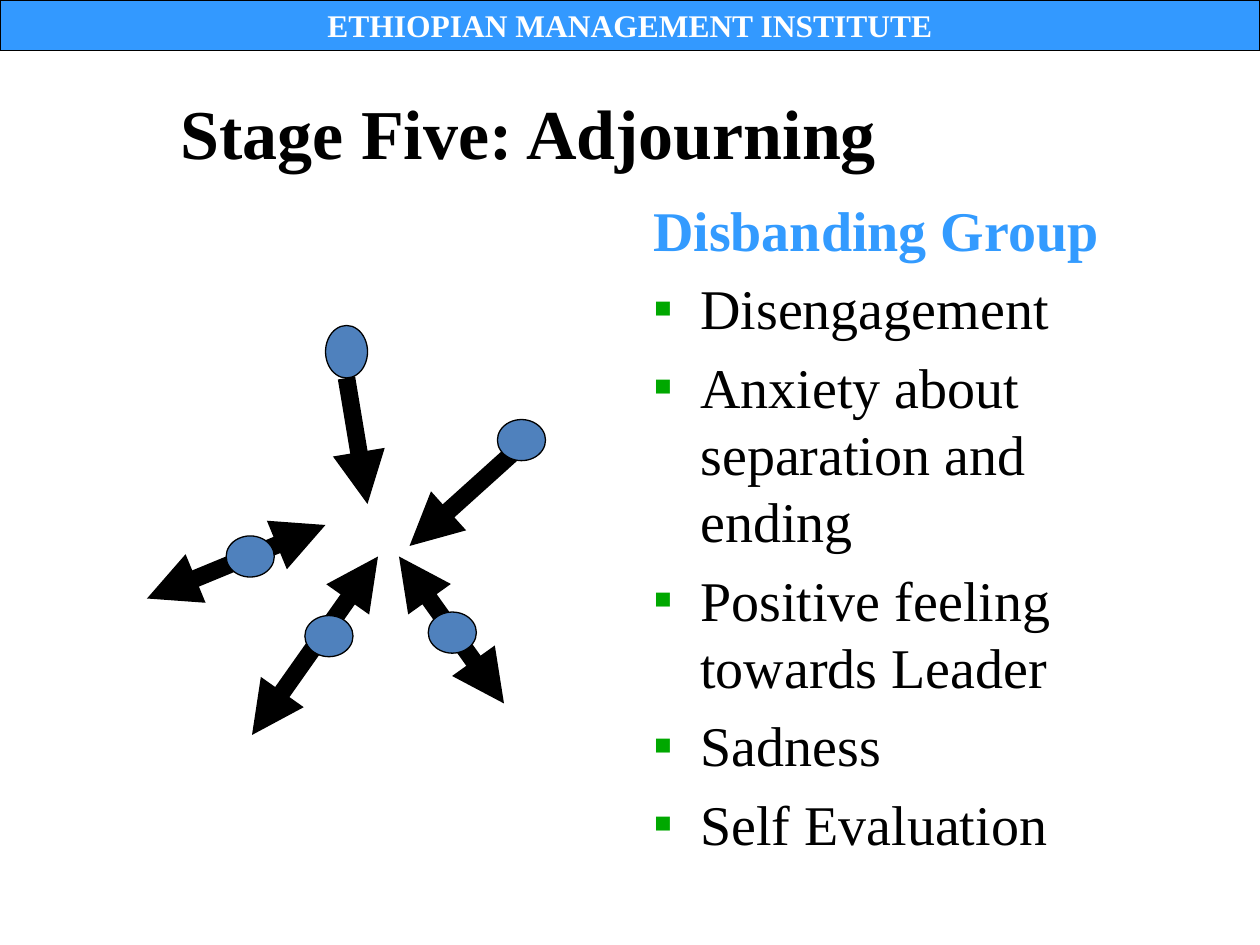
from dataclasses import dataclass

from lxml import etree
from pptx import Presentation
from pptx.dml.color import RGBColor
from pptx.enum.shapes import MSO_CONNECTOR, MSO_SHAPE
from pptx.enum.text import MSO_ANCHOR, MSO_AUTO_SIZE, PP_ALIGN
from pptx.oxml.ns import qn
from pptx.util import Pt

STRAIGHT = MSO_CONNECTOR.STRAIGHT
RECTANGLE, OVAL = MSO_SHAPE.RECTANGLE, MSO_SHAPE.OVAL
TOP, MIDDLE = MSO_ANCHOR.TOP, MSO_ANCHOR.MIDDLE
LEFT, CENTER = PP_ALIGN.LEFT, PP_ALIGN.CENTER
NO_AUTOFIT = MSO_AUTO_SIZE.NONE


@dataclass(frozen=True)
class Theme:
    """Colours, typeface and sizes of the slide."""
    ink: str = "000000"
    paper: str = "FFFFFF"
    banner: str = "3399FF"
    heading: str = "339BFF"
    bullet: str = "00A800"
    member: str = "4F81BD"
    face: str = "Times New Roman"
    banner_size: float = 18
    title_size: float = 40
    list_size: float = 32
    outline: float = 0.75
    arrow: float = 10


THEME = Theme()
SLIDE_SIZE = (720, 540)
BANNER_BOX = (0, 0, 720, 28.8)
TITLE_BOX = (96, 42, 624, 66)
LIST_BOX = (366, 108, 318, 348)
DIAGRAM_ORIGIN = (84, 186)

HEADING = "Disbanding Group"
SIGNS = [
    "Disengagement",
    "Anxiety about separation and ending",
    "Positive feeling towards Leader",
    "Sadness",
    "Self Evaluation",
]

ONE_WAY, TWO_WAY = ("tailEnd",), ("headEnd", "tailEnd")
ARROWS = [
    ((114, 30), (126, 102), ONE_WAY),
    ((210, 72), (150, 126), ONE_WAY),
    ((102, 114), (0, 156), TWO_WAY),
    ((132, 132), (60, 234), TWO_WAY),
    ((144, 132), (204, 216), TWO_WAY),
]
TALL, WIDE = (24, 30), (27.5, 23.5)
MEMBERS = [
    ((114, 15), TALL),
    ((214, 65.5), WIDE),
    ((59, 132), WIDE),
    ((104, 177.5), WIDE),
    ((174.5, 175.5), WIDE),
]


def apply(target, values):
    """Set every named attribute on the target."""
    for name, value in values.items():
        setattr(target, name, value)


def place(shape, box):
    """Move a shape to a box given in points."""
    sides = ("left", "top", "width", "height")
    apply(shape, dict(zip(sides, map(Pt, box))))


def write(paragraph, text, size, color, bold=False):
    """Add one formatted run to a paragraph."""
    run = paragraph.add_run()
    run.text = text
    apply(run.font, {"name": THEME.face, "size": Pt(size), "bold": bold})
    run.font.color.rgb = RGBColor.from_string(color)


def paint(shape, fill):
    """Give a shape a flat fill and a thin outline."""
    shape.fill.solid()
    shape.fill.fore_color.rgb = RGBColor.from_string(fill)
    shape.line.color.rgb = RGBColor.from_string(THEME.ink)
    shape.line.width = Pt(THEME.outline)
    shape.shadow.inherit = False


def hang(paragraph, bullet=None):
    """Set a hanging indent, with a coloured bullet if one is given."""
    properties = paragraph._p.get_or_add_pPr()
    properties.set("marL", str(Pt(27)))
    properties.set("indent", str(-Pt(27)))
    if bullet is None:
        etree.SubElement(properties, qn("a:buNone"))
        return
    tint = etree.SubElement(properties, qn("a:buClr"))
    etree.SubElement(tint, qn("a:srgbClr"), val=THEME.bullet)
    etree.SubElement(properties, qn("a:buFont"), typeface=THEME.face)
    etree.SubElement(properties, qn("a:buChar"), char=bullet)


def add_banner(slide, box):
    """Draw the institute banner across the top."""
    banner = slide.shapes.add_shape(RECTANGLE, *map(Pt, box))
    paint(banner, THEME.banner)
    apply(banner.text_frame, {"word_wrap": True, "vertical_anchor": MIDDLE})
    name = banner.text_frame.paragraphs[0]
    name.alignment = CENTER
    write(name, "ETHIOPIAN MANAGEMENT INSTITUTE", THEME.banner_size, THEME.paper, True)


def add_title(slide, box):
    """Fill the title placeholder."""
    title = slide.shapes.title
    place(title, box)
    apply(title.text_frame, {"auto_size": NO_AUTOFIT, "vertical_anchor": MIDDLE})
    stage = title.text_frame.paragraphs[0]
    stage.alignment = LEFT
    write(stage, "Stage Five: Adjourning", THEME.title_size, THEME.ink, True)


def add_signs(slide, box):
    """Fill the body placeholder with the heading and its list."""
    body = slide.placeholders[1]
    place(body, box)
    frame = body.text_frame
    apply(frame, {"auto_size": NO_AUTOFIT, "vertical_anchor": TOP})
    heading = frame.paragraphs[0]
    heading.space_before = Pt(0)
    hang(heading)
    write(heading, HEADING, THEME.list_size, THEME.heading, True)
    for sign in SIGNS:
        item = frame.add_paragraph()
        item.space_before = Pt(6.4)
        hang(item, "▪")
        write(item, sign, THEME.list_size, THEME.ink)


def add_diagram(slide, origin):
    """Draw the members drifting away from the group."""
    left, top = origin
    group = slide.shapes.add_group_shape()
    for (x1, y1), (x2, y2), ends in ARROWS:
        points = (left + x1, top + y1, left + x2, top + y2)
        arrow = group.shapes.add_connector(STRAIGHT, *map(Pt, points))
        arrow.line.color.rgb = RGBColor.from_string(THEME.ink)
        arrow.line.width = Pt(THEME.arrow)
        stroke = arrow.line._get_or_add_ln()
        for end in ends:
            etree.SubElement(stroke, qn(f"a:{end}"), type="triangle")
        etree.SubElement(arrow._element.spPr, qn("a:effectLst"))
    for (x, y), (width, height) in MEMBERS:
        box = (left + x - width / 2, top + y - height / 2, width, height)
        paint(group.shapes.add_shape(OVAL, *map(Pt, box)), THEME.member)


def main():
    """Build and save the slide."""
    deck = Presentation()
    deck.slide_width, deck.slide_height = map(Pt, SLIDE_SIZE)
    slide = deck.slides.add_slide(deck.slide_layouts[1])
    add_banner(slide, BANNER_BOX)
    add_title(slide, TITLE_BOX)
    add_signs(slide, LIST_BOX)
    add_diagram(slide, DIAGRAM_ORIGIN)
    deck.save("out.pptx")


if __name__ == "__main__":
    main()
